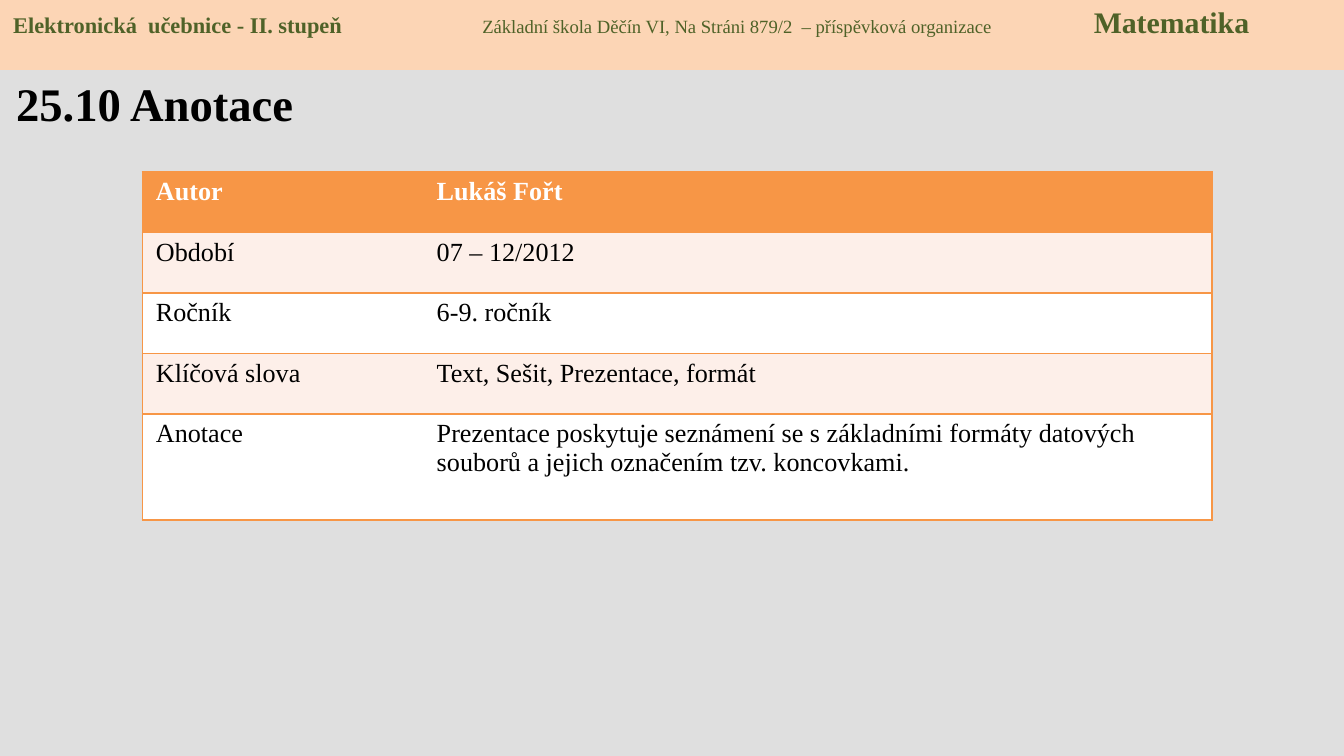
from lxml import etree
from pptx import Presentation
from pptx.dml.color import RGBColor
from pptx.enum.shapes import MSO_SHAPE
from pptx.enum.text import MSO_ANCHOR, MSO_AUTO_SIZE, PP_ALIGN
from pptx.oxml.ns import qn
from pptx.util import Inches, Pt

RECTANGLE = MSO_SHAPE.RECTANGLE
TOP = MSO_ANCHOR.TOP
LEFT = PP_ALIGN.LEFT
FIXED = MSO_AUTO_SIZE.NONE

FONT = "Times New Roman"
ORANGE, PEACH, WHITE, BLACK = "F79646", "FDEFE9", "FFFFFF", "000000"
HEADER_FILL, GREEN, GREY = "FCD5B5", "4F6228", "DFDFDF"

TITLE = "25.10 Anotace"
HEADER_PARTS = [
    ("Elektronická  učebnice - II. stupeň", 12, True),
    ("\tZákladní škola Děčín VI, Na Stráni 879/2  – příspěvková organizace", 10, False),
    ("\tMatematika", 16, True),
]
HEADER_TABS = [3.49, 8.04]
ANNOTATION = [
    ("Autor", "Lukáš Fořt"),
    ("Období", "07 – 12/2012"),
    ("Ročník", "6-9. ročník"),
    ("Klíčová slova", "Text, Sešit, Prezentace, formát"),
    ("Anotace", "Prezentace poskytuje seznámení se s základními formáty datových "
                "souborů a jejich označením tzv. koncovkami."),
]
COLUMN_WIDTHS = [2.09, 5.87]
ROW_HEIGHTS = [0.45] * 4 + [0.79]


def color(value):
    """Turn a hex string into a colour."""
    return RGBColor.from_string(value)


def paint(fill, value):
    """Make a fill solid in the given colour."""
    fill.solid()
    fill.fore_color.rgb = color(value)


def style_font(font, size, value, bold):
    """Apply the slide's typeface with size, colour and weight."""
    font.name = FONT
    font.size = Pt(size)
    font.bold = bold
    font.color.rgb = color(value)


def prepare_frame(frame):
    """Set a text frame to fixed size, anchored at its top."""
    frame.auto_size = FIXED
    frame.word_wrap = True
    frame.vertical_anchor = TOP
    frame.margin_top = Inches(0.05)


def add_title(slide):
    """Place and format the slide title."""
    title = slide.shapes.title
    title.left, title.top = Inches(0.02), Inches(0.51)
    title.width, title.height = Inches(3.19), Inches(0.49)
    prepare_frame(title.text_frame)
    title.text_frame.text = TITLE
    heading = title.text_frame.paragraphs[0]
    heading.alignment = LEFT
    style_font(heading.runs[0].font, 25, BLACK, True)


def add_tab_stops(paragraph, positions):
    """Add left tab stops, given in inches, to a paragraph."""
    stops = etree.SubElement(paragraph._p.get_or_add_pPr(), qn("a:tabLst"))
    for position in positions:
        etree.SubElement(stops, qn("a:tab"), pos=str(Inches(position)), algn="l")


def add_header(slide, width):
    """Draw the header band with its three tabbed parts."""
    band = slide.shapes.add_shape(RECTANGLE, 0, Inches(-0.02), width, Inches(0.54))
    band.shadow.inherit = False
    paint(band.fill, HEADER_FILL)
    band.line.fill.background()
    prepare_frame(band.text_frame)
    paragraph = band.text_frame.paragraphs[0]
    paragraph.alignment = LEFT
    add_tab_stops(paragraph, HEADER_TABS)
    for text, size, bold in HEADER_PARTS:
        part = paragraph.add_run()
        part.text = text
        style_font(part.font, size, GREEN, bold)


def add_borders(cell, open_side):
    """Outline a cell in orange except on its open side."""
    properties = cell._tc.get_or_add_tcPr()
    for side in "LRTB":
        line = etree.SubElement(properties, qn(f"a:ln{side}"), w=str(Pt(1)))
        if side == open_side:
            etree.SubElement(line, qn("a:noFill"))
        else:
            fill = etree.SubElement(line, qn("a:solidFill"))
            etree.SubElement(fill, qn("a:srgbClr"), val=ORANGE)


def fill_cell(cell, text, row, column):
    """Write and format one cell according to its place in the table."""
    heading = row == 0
    add_borders(cell, "RL"[column])
    paint(cell.fill, ORANGE if heading else PEACH if row % 2 else WHITE)
    cell.margin_top = cell.margin_bottom = Inches(0.04)
    cell.text_frame.text = text
    font = cell.text_frame.paragraphs[0].runs[0].font
    style_font(font, 14, WHITE if heading else BLACK, heading)


def add_annotation(slide):
    """Add the annotation table."""
    table = slide.shapes.add_table(
        len(ROW_HEIGHTS), len(COLUMN_WIDTHS), Inches(1.06), Inches(1.28),
        Inches(sum(COLUMN_WIDTHS)), Inches(sum(ROW_HEIGHTS))).table
    for column, width in zip(table.columns, COLUMN_WIDTHS):
        column.width = Inches(width)
    for row, height in zip(table.rows, ROW_HEIGHTS):
        row.height = Inches(height)
    for row, texts in enumerate(ANNOTATION):
        for column, text in enumerate(texts):
            fill_cell(table.cell(row, column), text, row, column)


def main():
    """Build and save the slide."""
    deck = Presentation()
    deck.slide_width = Inches(10)
    deck.slide_height = deck.slide_width * 9 // 16
    slide = deck.slides.add_slide(deck.slide_layouts[5])
    paint(slide.background.fill, GREY)
    add_title(slide)
    add_annotation(slide)
    add_header(slide, deck.slide_width)
    deck.save("out.pptx")


if __name__ == "__main__":
    main()
